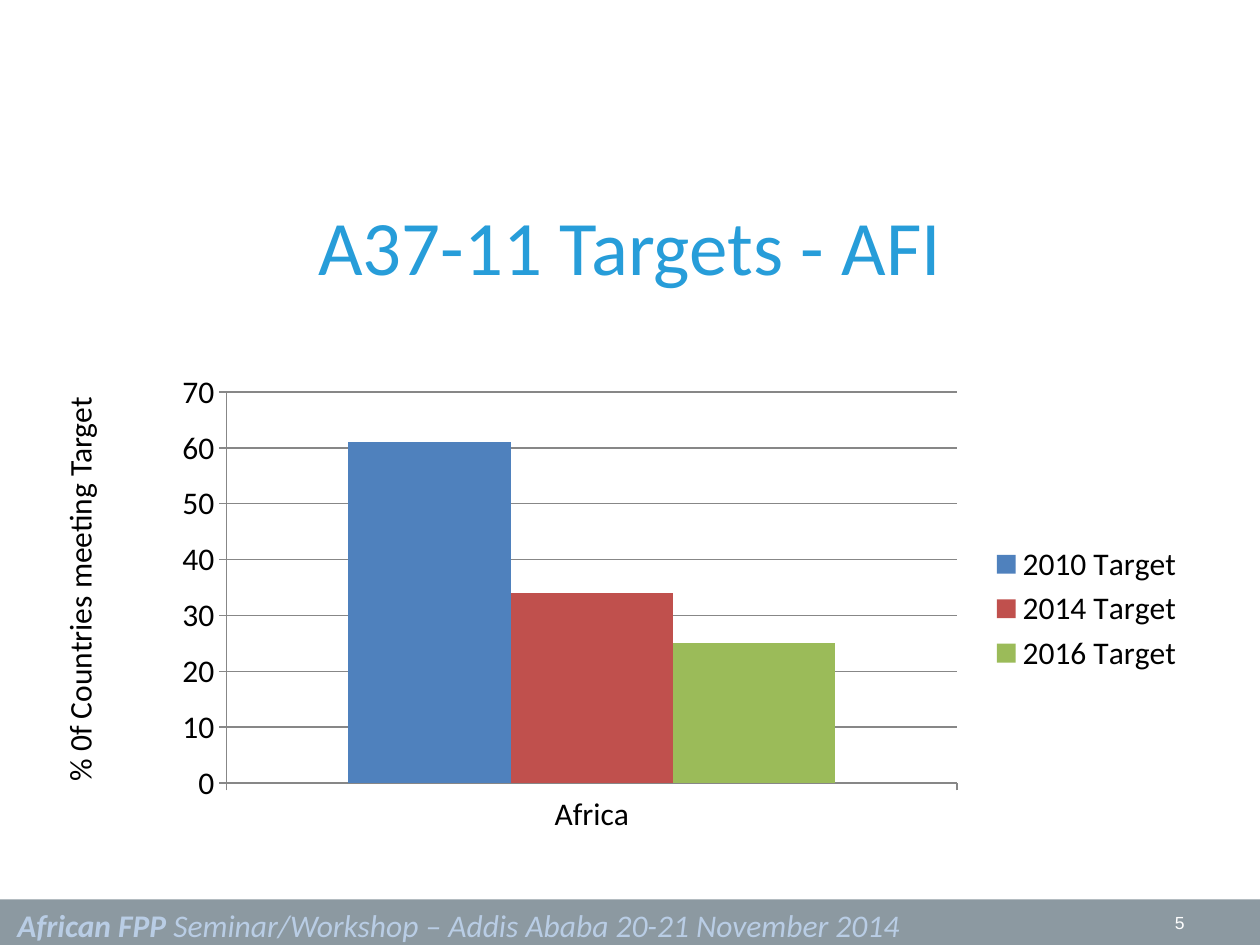
import pptx
import pptx.chart.data
import pptx.dml.color
import pptx.enum.chart
import pptx.enum.shapes
import pptx.enum.text
import pptx.util
from lxml import etree
from pptx.util import Cm

COLORS = {
    "title": "279DD9",
    "band": "8C99A1",
    "footer": "B9CDE5",
    "white": "FFFFFF",
    "black": "000000",
    "grid": "878787",
}
SERIES = [
    ("2010 Target", 61, "4F81BD"),
    ("2014 Target", 34, "C0504D"),
    ("2016 Target", 25, "9BBB59"),
]
ALIGN = pptx.enum.text.PP_ALIGN
ANCHOR = pptx.enum.text.MSO_ANCHOR


def rgb(color):
    return pptx.dml.color.RGBColor.from_string(color)


def write_text(shape, text, size=18, color="black", font="Calibri", bold=False,
               italic=False, align=ALIGN.LEFT, anchor=ANCHOR.TOP, wrap=True):
    """Append a formatted run to the first paragraph of the shape."""
    frame = shape.text_frame
    frame.word_wrap = wrap
    frame.vertical_anchor = anchor
    paragraph = frame.paragraphs[0]
    paragraph.alignment = align
    run = paragraph.add_run()
    run.text = text
    run.font.name = font
    run.font.size = pptx.util.Pt(size)
    run.font.bold = bold
    run.font.italic = italic
    run.font.color.rgb = rgb(COLORS[color])


presentation = pptx.Presentation()
presentation.slide_width = Cm(25.4)
presentation.slide_height = Cm(19.05)
slide = presentation.slides.add_slide(presentation.slide_layouts[5])
shapes = slide.shapes

# Title
title = shapes.title
title.left, title.top, title.width, title.height = Cm(1.27), Cm(3.73), Cm(22.86), Cm(2.39)
write_text(title, "A37-11 Targets - AFI", size=44, color="title",
           align=ALIGN.CENTER, anchor=ANCHOR.MIDDLE)

# Footer band
band = shapes.add_shape(pptx.enum.shapes.MSO_SHAPE.RECTANGLE,
                        Cm(0), Cm(18.13), Cm(25.4), Cm(0.92))
band.shadow.inherit = False
band.fill.solid()
band.fill.fore_color.rgb = rgb(COLORS["band"])
band.line.fill.background()

# Chart of targets
chart_data = pptx.chart.data.CategoryChartData()
chart_data.categories = ["Africa"]
for name, value, color in SERIES:
    chart_data.add_series(name, [value])
chart = shapes.add_chart(pptx.enum.chart.XL_CHART_TYPE.COLUMN_CLUSTERED,
                         Cm(3.1), Cm(7.52), Cm(21.03), Cm(9.5), chart_data).chart
chart.has_title = False
chart.font.name = "Calibri"
chart.font.size = pptx.util.Pt(18)
chart.font.color.rgb = rgb(COLORS["black"])
chart.has_legend = True
chart.legend.position = pptx.enum.chart.XL_LEGEND_POSITION.RIGHT
chart.legend.include_in_layout = False

plot = chart.plots[0]
plot.gap_width = 150
plot.overlap = 0
plot.vary_by_categories = False
for series, (name, value, color) in zip(plot.series, SERIES):
    series.format.fill.solid()
    series.format.fill.fore_color.rgb = rgb(color)

value_axis = chart.value_axis
value_axis.minimum_scale, value_axis.maximum_scale, value_axis.major_unit = 0, 70, 10
value_axis.has_major_gridlines = True
for axis in (chart.category_axis, value_axis):
    axis.major_tick_mark = pptx.enum.chart.XL_TICK_MARK.OUTSIDE
for part in (chart.category_axis, value_axis, value_axis.major_gridlines):
    part.format.line.color.rgb = rgb(COLORS["grid"])
    part.format.line.width = pptx.util.Pt(0.75)

# Fixed inner plot area, as fractions of the chart
namespace = "{http://schemas.openxmlformats.org/drawingml/2006/chart}"
plot_area = chart.element.find(f".//{namespace}plotArea")
for old_layout in plot_area.findall(f"{namespace}layout"):
    plot_area.remove(old_layout)
layout = etree.Element(f"{namespace}layout")
plot_area.insert(0, layout)
manual_layout = etree.SubElement(layout, f"{namespace}manualLayout")
for tag, value in [("layoutTarget", "inner"), ("xMode", "edge"), ("yMode", "edge"),
                   ("x", "0.07"), ("y", "0.04"), ("w", "0.7"), ("h", "0.83")]:
    etree.SubElement(manual_layout, f"{namespace}{tag}").set("val", value)

# Slide number
slide_number = shapes.add_textbox(Cm(18.21), Cm(18.13), Cm(5.92), Cm(0.92))
write_text(slide_number, "5", size=10, color="white", font="Arial",
           align=ALIGN.RIGHT, anchor=ANCHOR.MIDDLE)

# Rotated label of the value axis
axis_label = shapes.add_textbox(Cm(-2.64), Cm(11.25), Cm(8.48), Cm(1.02))
axis_label.rotation = 270
write_text(axis_label, "% 0f Countries meeting Target", wrap=False)

# Footer text
footer = shapes.add_textbox(Cm(0.1), Cm(18.13), Cm(23.01), Cm(0.99))
write_text(footer, "African FPP", color="footer", bold=True, italic=True)
write_text(footer, " Seminar/Workshop – Addis Ababa 20-21 November 2014",
           color="footer", italic=True)

presentation.save("out.pptx")
